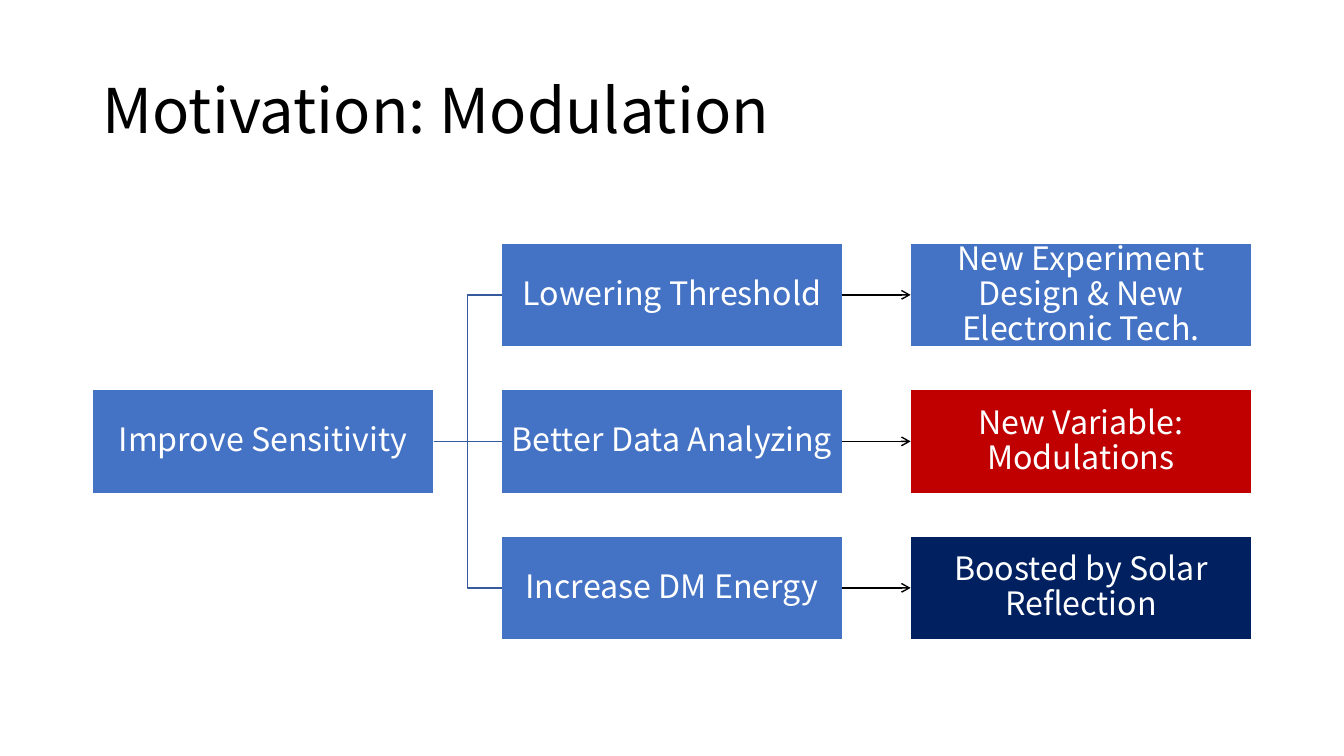
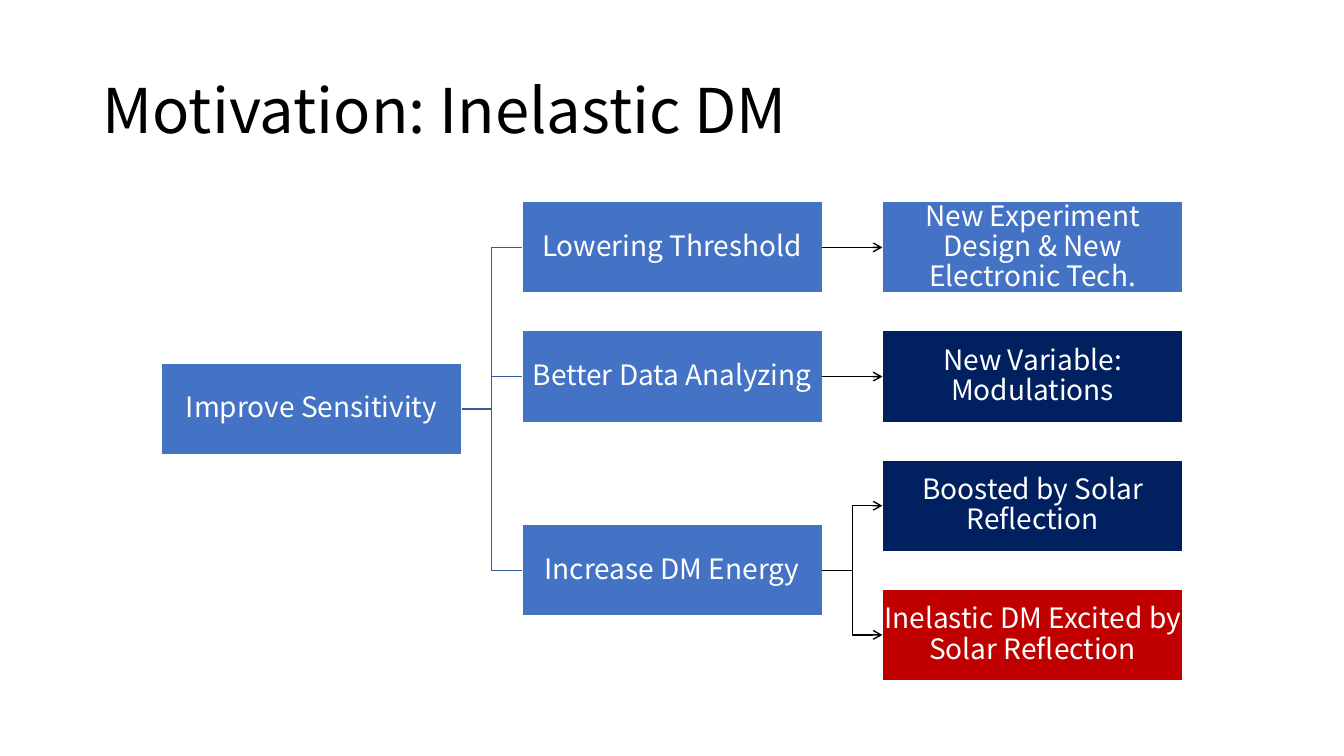
from lxml import etree
from pptx import Presentation
from pptx.dml.color import RGBColor
from pptx.enum.shapes import MSO_CONNECTOR, MSO_SHAPE
from pptx.enum.text import MSO_ANCHOR, PP_ALIGN
from pptx.oxml.ns import qn
from pptx.util import Inches, Pt

RECTANGLE = MSO_SHAPE.RECTANGLE
STRAIGHT, ELBOW = MSO_CONNECTOR.STRAIGHT, MSO_CONNECTOR.ELBOW
MIDDLE, LEFT, CENTER = MSO_ANCHOR.MIDDLE, PP_ALIGN.LEFT, PP_ALIGN.CENTER
LEFT_SITE, RIGHT_SITE = 1, 3

FONT = "Noto Sans CJK SC"
COLORS = {
    "title": "000000",
    "label": "FFFFFF",
    "outline": "FFFFFF",
    "plain": "4472C4",
    "known": "002060",
    "focus": "C00000",
    "branch": "365B9D",
    "arrow": "000000",
}

# Grid of the tree, in box widths
COLUMN_STEP, ROW_STEP, BOX_HEIGHT = 1.2, 0.43, 0.305

GOAL = "Improve Sensitivity"
THRESHOLD = ("Lowering Threshold",
             [("New Experiment Design & New Electronic Tech.", "plain")])
ANALYSIS, MODULATIONS = "Better Data Analyzing", "New Variable: Modulations"
ENERGY, BOOSTED = "Increase DM Energy", ("Boosted by Solar Reflection", "known")

SLIDES = [
    {"title": "Motivation: Modulation",
     "left": 0.92, "top": 2.41, "box_width": 3.38, "size": 23,
     "approaches": [THRESHOLD,
                    (ANALYSIS, [(MODULATIONS, "focus")]),
                    (ENERGY, [BOOSTED])]},
    {"title": "Motivation: Inelastic DM",
     "left": 1.6, "top": 2, "box_width": 2.98, "size": 20,
     "approaches": [THRESHOLD,
                    (ANALYSIS, [(MODULATIONS, "known")]),
                    (ENERGY, [BOOSTED,
                              ("Inelastic DM Excited by Solar Reflection", "focus")])]},
]


def write(shape, text, size, color, alignment):
    frame = shape.text_frame
    frame.text = text
    frame.word_wrap = True
    frame.vertical_anchor = MIDDLE
    paragraph = frame.paragraphs[0]
    paragraph.alignment = alignment
    paragraph.line_spacing = 0.9
    font = paragraph.runs[0].font
    font.name, font.size = FONT, Pt(size)
    font.color.rgb = RGBColor.from_string(COLORS[color])


def connect(slide, parent, child, color):
    """Link two boxes, bending halfway when they are on different rows."""
    level = abs(parent.top - child.top) < Inches(0.01)
    link = slide.shapes.add_connector(STRAIGHT if level else ELBOW, 0, 0, 0, 0)
    link.begin_connect(parent, RIGHT_SITE)
    link.end_connect(child, LEFT_SITE)
    link.line.color.rgb = RGBColor.from_string(COLORS[color])
    link.line.width = Pt(1)
    if color == "arrow":
        etree.SubElement(link.line._get_or_add_ln(), qn("a:tailEnd"), type="arrow")
    etree.SubElement(link._element.spPr, qn("a:effectLst"))


deck = Presentation()
deck.slide_width, deck.slide_height = Inches(13.33), Inches(7.5)
blank = deck.slide_layouts[6]

for content in SLIDES:
    slide = deck.slides.add_slide(blank)
    title = slide.shapes.add_textbox(Inches(0.92), Inches(0.4), Inches(11.5), Inches(1.45))
    write(title, content["title"], 44, "title", LEFT)

    # Every parent sits halfway between its first and last child
    nodes, links = [], []
    approach_rows, approach_nodes, next_row = [], [], 0
    for approach, outcomes in content["approaches"]:
        row = next_row + (len(outcomes) - 1) / 2
        approach_rows.append(row)
        approach_node = len(nodes)
        approach_nodes.append(approach_node)
        nodes.append((approach, "plain", 1, row))
        for outcome, color in outcomes:
            links.append((approach_node, len(nodes), "arrow"))
            nodes.append((outcome, color, 2, next_row))
            next_row += 1
    links += [(len(nodes), node, "branch") for node in approach_nodes]
    nodes.append((GOAL, "plain", 0, (approach_rows[0] + approach_rows[-1]) / 2))

    width = Inches(content["box_width"])
    boxes = []
    for text, color, column, row in nodes:
        box = slide.shapes.add_shape(
            RECTANGLE,
            Inches(content["left"]) + int(column * COLUMN_STEP * width),
            Inches(content["top"]) + int(row * ROW_STEP * width),
            width, int(BOX_HEIGHT * width))
        box.shadow.inherit = False
        box.fill.solid()
        box.fill.fore_color.rgb = RGBColor.from_string(COLORS[color])
        box.line.color.rgb = RGBColor.from_string(COLORS["outline"])
        box.line.width = Pt(1)
        frame = box.text_frame
        frame.margin_left = frame.margin_right = Inches(0.01)
        frame.margin_top = frame.margin_bottom = Inches(0.01)
        write(box, text, content["size"], "label", CENTER)
        boxes.append(box)

    for parent, child, color in links:
        connect(slide, boxes[parent], boxes[child], color)

deck.save("out.pptx")
